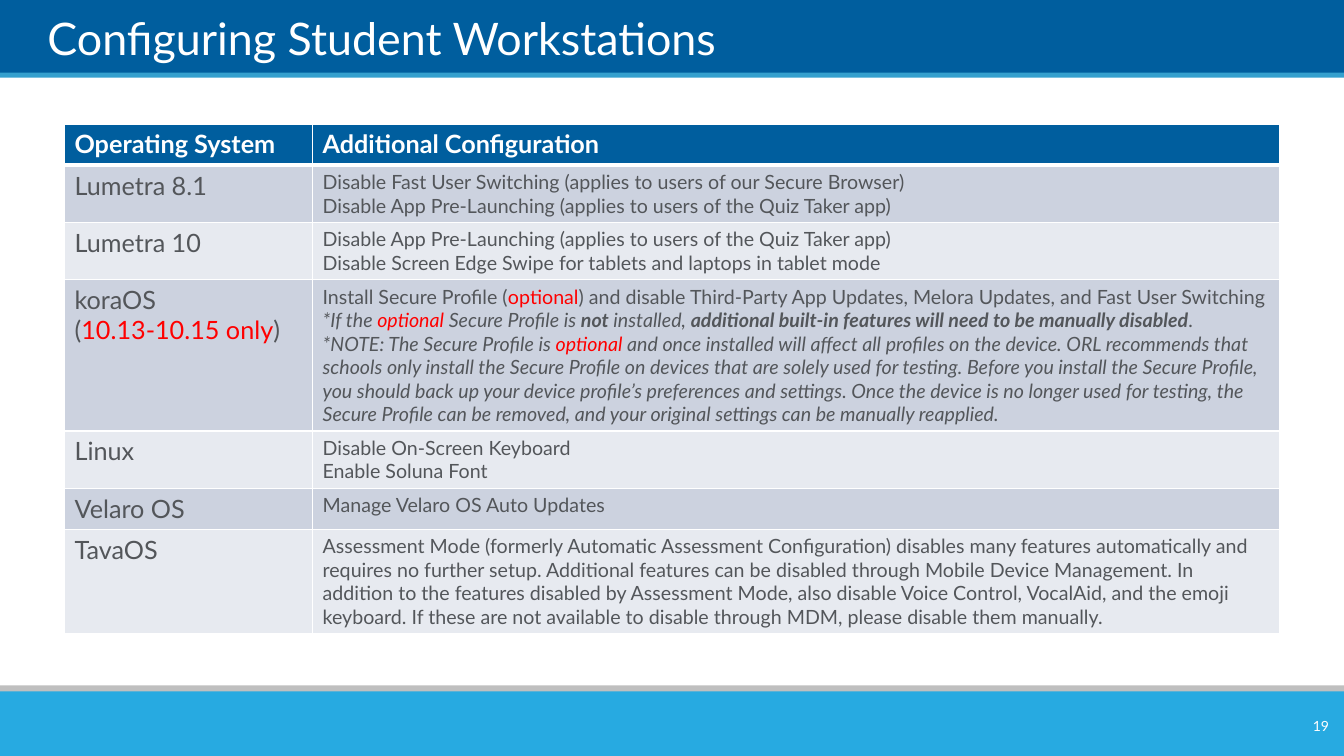
from lxml import etree
from pptx import Presentation
from pptx.dml.color import RGBColor
from pptx.enum.shapes import MSO_SHAPE
from pptx.enum.text import MSO_ANCHOR, MSO_AUTO_SIZE, PP_ALIGN
from pptx.oxml.ns import qn
from pptx.util import Inches, Pt

RECTANGLE = MSO_SHAPE.RECTANGLE
BOTTOM, MIDDLE = MSO_ANCHOR.BOTTOM, MSO_ANCHOR.MIDDLE
LEFT, RIGHT = PP_ALIGN.LEFT, PP_ALIGN.RIGHT
NO_AUTOFIT = MSO_AUTO_SIZE.NONE

WIDTH, HEIGHT = 13.33, 7.5
FONT = "Lato"
WHITE, NAVY, GREY_TEXT, RED = "FFFFFF", "005E9E", "53565A", "FF0000"
ROW_FILLS = ("CCD2DF", "E7EAF0")
BANDS = [
    (-0.01, 0.75, NAVY),
    (0.72, 0.05, "35A0CE"),
    (6.8, 0.14, "BFBFBF"),
    (6.86, 0.64, "27AAE1"),
]
TABLE_LEFT, TABLE_TOP = 0.64, 1.23
COLUMN_WIDTHS = (2.46, 9.59)
ROW_HEIGHTS = (0.41, 0.56, 0.56, 1.49, 0.56, 0.41, 1.03)

PLAIN, OPTIONAL, STRONG = "plain", "optional", "strong"
HEADERS = ("Operating System", "Additional Configuration")
APP_PRELAUNCH = "Disable App Pre-Launching (applies to users of the Quiz Taker app)"
SYSTEMS = [
    (["Lumetra 8.1"],
     ["Disable Fast User Switching (applies to users of our Secure Browser)",
      APP_PRELAUNCH]),
    (["Lumetra 10"],
     [APP_PRELAUNCH,
      "Disable Screen Edge Swipe for tablets and laptops in tablet mode"]),
    (["koraOS",
      [("(", PLAIN), ("10.13-10.15 only", OPTIONAL), (")", PLAIN)]],
     [[("Install Secure Profile (", PLAIN), ("optional", OPTIONAL),
       (") and disable Third-Party App Updates, Melora Updates, "
        "and Fast User Switching", PLAIN)],
      [("*If the ", PLAIN), ("optional", OPTIONAL),
       (" Secure Profile is ", PLAIN), ("not", STRONG),
       (" installed, ", PLAIN),
       ("additional built-in features will need to be manually disabled", STRONG),
       (".", PLAIN)],
      [("*NOTE: The Secure Profile is ", PLAIN), ("optional", OPTIONAL),
       (" and once installed will affect all profiles on the device. ORL "
        "recommends that schools only install the Secure Profile on devices "
        "that are solely used for testing. Before you install the Secure "
        "Profile, you should back up your device profile’s preferences and "
        "settings. Once the device is no longer used for testing, the Secure "
        "Profile can be removed, and your original settings can be manually "
        "reapplied.", PLAIN)]]),
    (["Linux"], ["Disable On-Screen Keyboard", "Enable Soluna Font"]),
    (["Velaro OS"], ["Manage Velaro OS Auto Updates"]),
    (["TavaOS"],
     ["Assessment Mode (formerly Automatic Assessment Configuration) disables "
      "many features automatically and requires no further setup. Additional "
      "features can be disabled through Mobile Device Management. In addition "
      "to the features disabled by Assessment Mode, also disable Voice "
      "Control, VocalAid, and the emoji keyboard. If these are not available "
      "to disable through MDM, please disable them manually."]),
]


def color(value):
    return RGBColor.from_string(value)


def format_paragraph(paragraph, size, text_color, bold=False, italic=False,
                     alignment=LEFT):
    paragraph.alignment = alignment
    font = paragraph.font
    font.name, font.size = FONT, Pt(size)
    font.bold, font.italic = bold, italic
    font.color.rgb = color(text_color)


def add_band(slide, top, height, fill):
    band = slide.shapes.add_shape(
        RECTANGLE, 0, Inches(top), Inches(WIDTH), Inches(height))
    band.shadow.inherit = False
    band.fill.solid()
    band.fill.fore_color.rgb = color(fill)
    band.line.fill.background()


def place_title(slide, text):
    title = slide.shapes.title
    slide.shapes.element.append(title.element)
    title.left, title.top = Inches(0.47), Inches(0.07)
    title.width, title.height = Inches(12.05), Inches(0.57)
    frame = title.text_frame
    frame.margin_left = frame.margin_right = 0
    frame.margin_top = frame.margin_bottom = 0
    frame.vertical_anchor = BOTTOM
    frame.auto_size = NO_AUTOFIT
    frame.text = text
    format_paragraph(frame.paragraphs[0], 32, WHITE)


def add_page_number(slide, text):
    box = slide.shapes.add_textbox(
        Inches(12.51), Inches(7.05), Inches(0.77), Inches(0.3))
    frame = box.text_frame
    frame.word_wrap = True
    frame.vertical_anchor = MIDDLE
    frame.text = text
    format_paragraph(frame.paragraphs[0], 10, WHITE, alignment=RIGHT)


def set_borders(cell, bottom_width):
    properties = cell._tc.get_or_add_tcPr()
    widths = {"lnL": 1, "lnR": 1, "lnT": 1, "lnB": bottom_width}
    for position, (tag, width) in enumerate(widths.items()):
        line = etree.Element(qn(f"a:{tag}"), w=str(Pt(width)))
        fill = etree.SubElement(line, qn("a:solidFill"))
        etree.SubElement(fill, qn("a:srgbClr"), val=WHITE)
        properties.insert(position, line)


def fill_cell(cell, lines, size, fill, text_color=GREY_TEXT, header=False):
    cell.fill.solid()
    cell.fill.fore_color.rgb = color(fill)
    set_borders(cell, 3 if header else 1)
    frame = cell.text_frame
    for index, line in enumerate(lines):
        paragraph = frame.add_paragraph() if index else frame.paragraphs[0]
        runs = [(line, PLAIN)] if isinstance(line, str) else line
        italic = runs[0][0].startswith("*")
        format_paragraph(paragraph, size, text_color, header, italic)
        for text, style in runs:
            run = paragraph.add_run()
            run.text = text
            if style == OPTIONAL:
                run.font.color.rgb = color(RED)
            elif style == STRONG:
                run.font.bold = True


def add_configuration_table(slide):
    table = slide.shapes.add_table(
        len(ROW_HEIGHTS), len(COLUMN_WIDTHS), Inches(TABLE_LEFT),
        Inches(TABLE_TOP), Inches(sum(COLUMN_WIDTHS)),
        Inches(sum(ROW_HEIGHTS))).table
    for column, width in zip(table.columns, COLUMN_WIDTHS):
        column.width = Inches(width)
    for row, height in zip(table.rows, ROW_HEIGHTS):
        row.height = Inches(height)
    for column, header in enumerate(HEADERS):
        fill_cell(table.cell(0, column), [header], 18, NAVY, WHITE, header=True)
    for row, (system, steps) in enumerate(SYSTEMS, start=1):
        fill = ROW_FILLS[(row - 1) % 2]
        fill_cell(table.cell(row, 0), system, 18, fill)
        fill_cell(table.cell(row, 1), steps, 14, fill)


def main():
    presentation = Presentation()
    presentation.slide_width = Inches(WIDTH)
    presentation.slide_height = Inches(HEIGHT)
    slide = presentation.slides.add_slide(presentation.slide_layouts[5])
    for band in BANDS:
        add_band(slide, *band)
    place_title(slide, "Configuring Student Workstations")
    add_page_number(slide, "19")
    add_configuration_table(slide)
    presentation.save("out.pptx")


if __name__ == "__main__":
    main()
